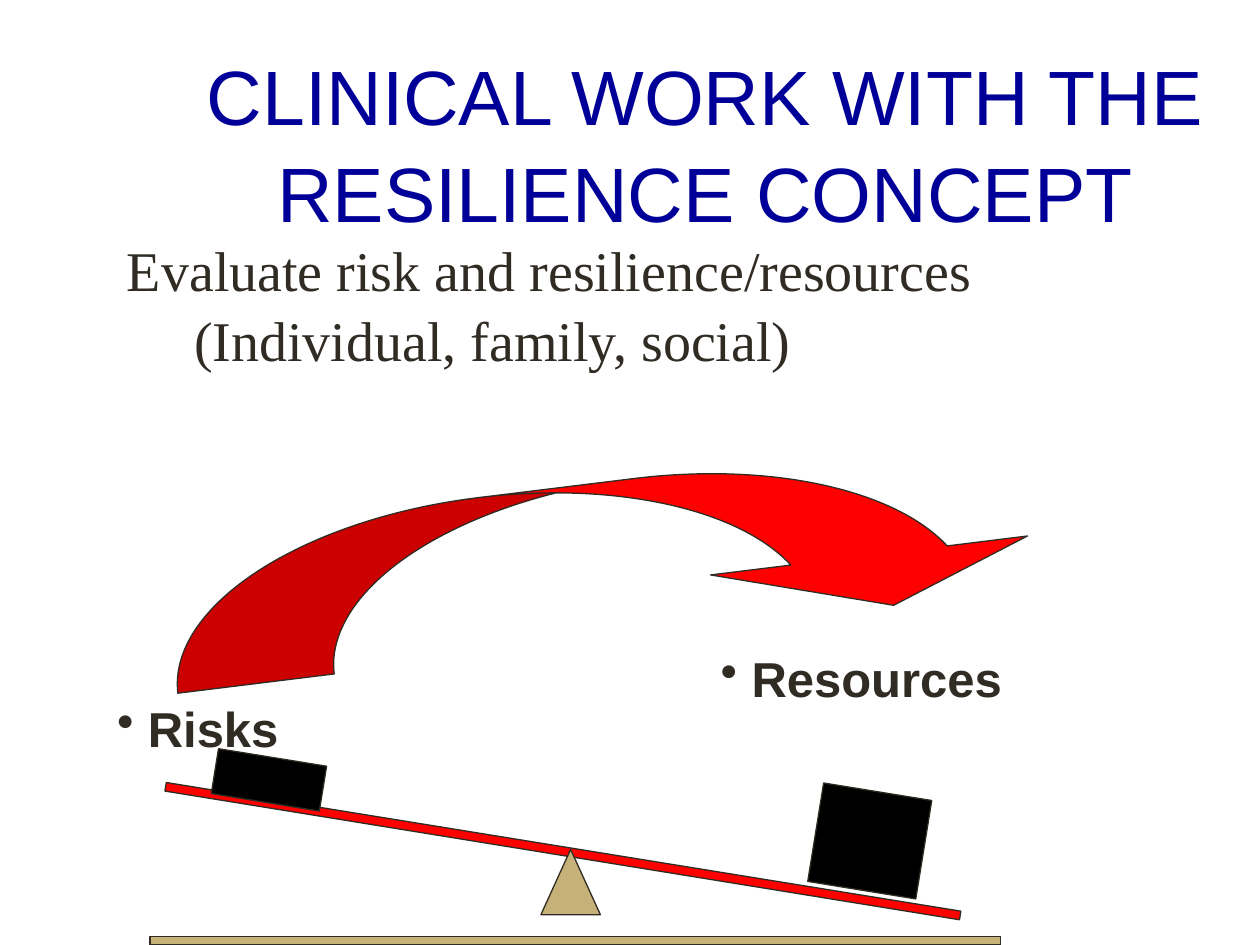
from lxml.etree import SubElement
from pptx import Presentation
from pptx.dml.color import RGBColor
from pptx.enum.shapes import MSO_SHAPE
from pptx.enum.text import MSO_ANCHOR, PP_ALIGN
from pptx.oxml.ns import qn
from pptx.util import Pt

NAVY = RGBColor(0x00, 0x00, 0x99)
INK = RGBColor(0x30, 0x2C, 0x24)
RED = RGBColor(0xFF, 0x00, 0x00)
TAN = RGBColor(0xC6, 0xB1, 0x78)
BLACK = RGBColor(0x00, 0x00, 0x00)

TITLE = {"name": "Arial", "size": Pt(44), "bold": False}
BODY = {"name": "Times New Roman", "size": Pt(32), "bold": False}
LABEL = {"name": "Arial", "size": Pt(28), "bold": True}
TILT = 9.2


def add_text(slide, box, text, font, color, align=PP_ALIGN.LEFT, hang=0, bullet=None):
    """Add a one-paragraph text box; hang is the hanging indent in points."""
    tf = slide.shapes.add_textbox(*map(Pt, box)).text_frame
    tf.word_wrap = True
    tf.vertical_anchor = MSO_ANCHOR.TOP
    p = tf.paragraphs[0]
    p.text = text
    p.alignment = align
    p.line_spacing = 1.05
    pPr = p._p.get_or_add_pPr()
    if hang:
        pPr.set("marL", str(Pt(hang)))
        pPr.set("indent", str(-Pt(hang)))
    if bullet:
        SubElement(pPr, qn("a:buChar")).set("char", bullet)
    r = p.runs[0]
    for key, value in font.items():
        setattr(r.font, key, value)
    r.font.color.rgb = color


def add_solid(slide, kind, box, fill, rotation=0, adjustments=()):
    sp = slide.shapes.add_shape(kind, *map(Pt, box))
    sp.shadow.inherit = False
    sp.rotation = rotation
    for i, value in enumerate(adjustments):
        sp.adjustments[i] = value
    sp.fill.solid()
    sp.fill.fore_color.rgb = fill
    sp.line.color.rgb = INK
    sp.line.width = Pt(0.75)


def add_heading(slide, left, top, width):
    add_text(slide, (left, top, width, 93),
             "CLINICAL WORK WITH THE RESILIENCE CONCEPT",
             TITLE, NAVY, PP_ALIGN.CENTER)


def add_statement(slide, left, top, width):
    add_text(slide, (left, top, width, 91),
             "Evaluate risk and resilience/resources (Individual, family, social)",
             BODY, INK, hang=38.3)


def add_shift_arrow(slide, left, top, width, height):
    add_solid(slide, MSO_SHAPE.CURVED_DOWN_ARROW, (left, top, width, height),
              RED, 353, (1.014, 2.027, 0.333))


def add_labels(slide, left, top):
    for text, dx, dy, width in (("Resources", 345, 0, 194), ("Risks", 0, 28.5, 178)):
        add_text(slide, (left + dx, top + dy, width, 41), text, LABEL, INK,
                 hang=17.6, bullet="•")


def add_seesaw(slide, left, top):
    """Draw the ground, tilted plank, two weights and pivot from the top left corner."""
    parts = (
        (MSO_SHAPE.RECTANGLE, (0, 102.3, 486, 5), TAN, 0),
        (MSO_SHAPE.RECTANGLE, (6, 51.2, 460, 5), RED, TILT),
        (MSO_SHAPE.RECTANGLE, (36.7, 0, 62.6, 26), BLACK, TILT),
        (MSO_SHAPE.RECTANGLE, (380, 19.4, 62.6, 57), BLACK, TILT),
        (MSO_SHAPE.ISOSCELES_TRIANGLE, (223.4, 52.7, 34, 37.3), TAN, 0),
    )
    for kind, (dx, dy, width, height), fill, rotation in parts:
        add_solid(slide, kind, (left + dx, top + dy, width, height), fill, rotation)


def main():
    prs = Presentation()
    prs.slide_width, prs.slide_height = Pt(720), Pt(540)
    slide = prs.slides.add_slide(prs.slide_layouts[6])
    add_heading(slide, 86.4, 21.6, 633.6)
    add_statement(slide, 65.5, 129, 612)
    add_shift_arrow(slide, 94.3, 275.8, 503.3, 90)
    add_labels(slide, 59.8, 365.2)
    add_seesaw(slide, 85.7, 432.7)
    prs.save("out.pptx")


if __name__ == "__main__":
    main()
